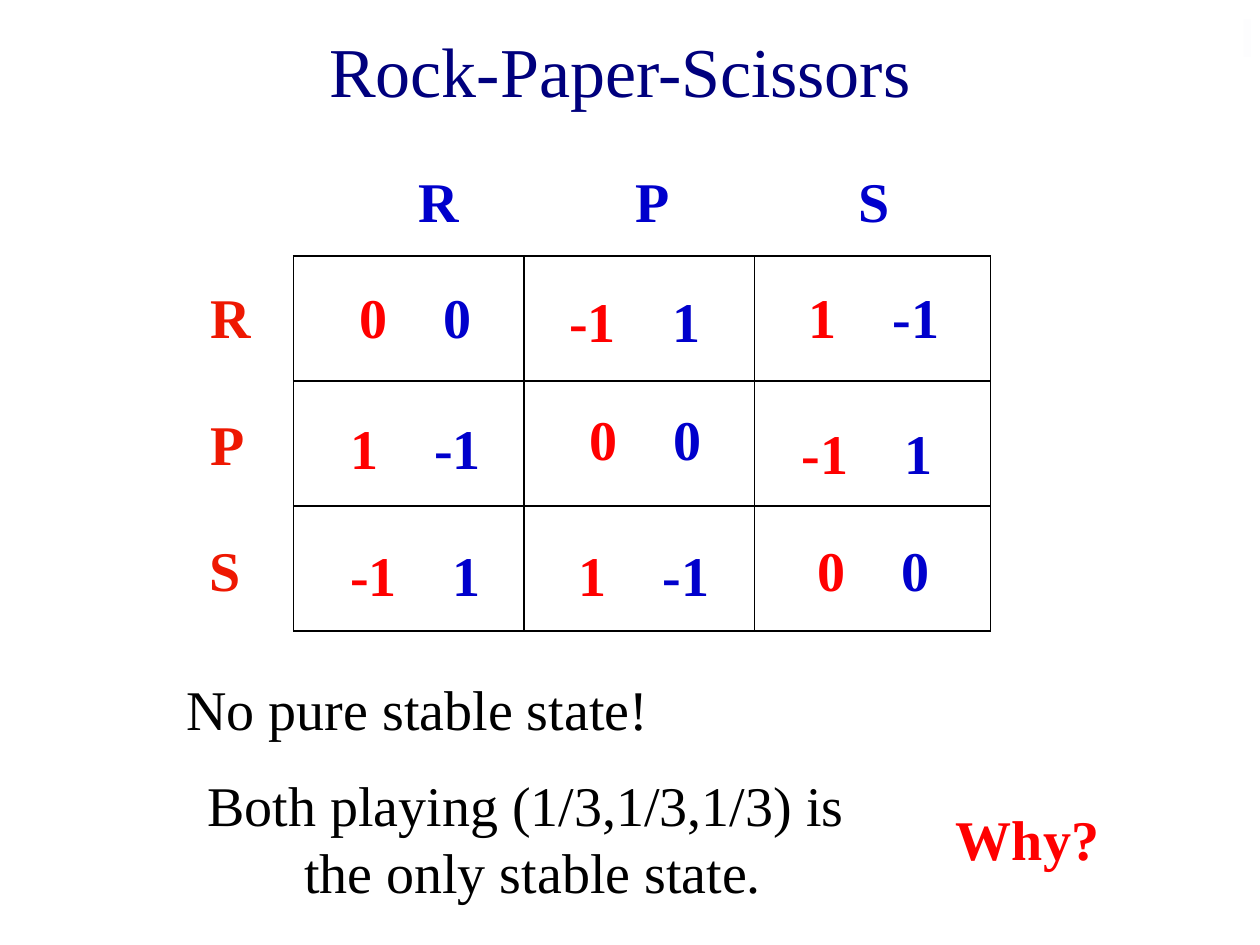
from dataclasses import dataclass
from lxml.etree import SubElement
from pptx import Presentation
from pptx.dml.color import RGBColor
from pptx.enum.shapes import MSO_SHAPE
from pptx.enum.text import MSO_ANCHOR, PP_ALIGN
from pptx.oxml.ns import qn
from pptx.util import Inches, Pt


@dataclass
class Theme:
    font: str = "Times New Roman"
    navy: str = "00007D"
    blue: str = "0000CC"
    red: str = "FF0000"
    brick: str = "EE1802"
    black: str = "000000"
    white: str = "FFFFFF"
    pale: str = "CCCCE6"
    head: int = 40
    body: int = 32


look = Theme()
deck = Presentation()
deck.slide_width, deck.slide_height = Inches(10), Inches(7.5)
unit = deck.slide_width / 100
slide = deck.slides.add_slide(deck.slide_layouts[6])


def span(*sizes):
    return [round(size * unit) for size in sizes]


def write(text, box, color=look.black, size=look.body, bold=False, tail="", tint=look.blue):
    frame = slide.shapes.add_textbox(*span(*box)).text_frame
    frame.word_wrap = bool(tail)
    frame.vertical_anchor = MSO_ANCHOR.MIDDLE
    if tail:
        frame.margin_right = 0
    for spot, line in enumerate(text.split("\n")):
        para = frame.add_paragraph() if spot else frame.paragraphs[0]
        para.alignment = PP_ALIGN.LEFT if tail else PP_ALIGN.CENTER
        parts = [(line, color)]
        if tail:
            stop = 6.66 if len(line) == 1 else 8.15
            tabs = SubElement(para._p.get_or_add_pPr(), qn("a:tabLst"))
            SubElement(tabs, qn("a:tab"), pos=str(round(stop * unit)), algn="l")
            parts.append(("\t" + tail, tint))
        for words, shade in parts:
            run = para.add_run()
            run.text = words
            run.font.name = look.font
            run.font.size = Pt(size)
            run.font.bold = bold
            run.font.color.rgb = RGBColor.from_string(shade)


bars = [
    ((0, 0, 3.1, 5.8), (look.pale, look.white)),
    ((4.5, 1.5, 95.5, 3), (look.navy, look.white)),
    ((6, 0, 1.5, 1.5), (look.pale,)),
    ((0, 0, 98.7, 8.1), (look.white,)),
]
for box, tones in bars:
    bar = slide.shapes.add_shape(MSO_SHAPE.RECTANGLE, *span(*box))
    bar.shadow.inherit = False
    bar.line.fill.background()
    if len(tones) == 1:
        bar.fill.solid()
        bar.fill.fore_color.rgb = RGBColor.from_string(tones[0])
    else:
        bar.fill.gradient()
        bar.fill.gradient_angle = 0
        for stop, tone in zip(bar.fill.gradient_stops, tones):
            stop.color.rgb = RGBColor.from_string(tone)

write("Rock-Paper-Scissors", (4.2, -2, 90, 15), look.navy, look.head)

grid = slide.shapes.add_table(3, 3, *span(23.3, 20.3, 55.3, 29.8)).table
grid.first_row = grid.horz_banding = False
for col, wide in zip(grid.columns, span(18.3, 18.3, 18.7)):
    col.width = wide
for row in grid.rows:
    row.height = span(9.93)[0]
    for cell in row.cells:
        props = cell._tc.get_or_add_tcPr()
        for side in ("lnL", "lnR", "lnT", "lnB"):
            edge = SubElement(props, qn("a:" + side), w=str(Pt(1)))
            fill = SubElement(edge, qn("a:solidFill"))
            SubElement(fill, qn("a:srgbClr"), val=look.black)
        cell.fill.background()

tall = 6.4
moves = zip("RPS", (5.3, 4.8, 4.5), (32.2, 49.4, 67.1), (15.7, 15.7, 15.6), (21.9, 32, 42))
for move, wide, across, left, down in moves:
    write(move, (across, 12.7, wide, tall), look.blue, bold=True)
    write(move, (left, down, wide, tall), look.brick, bold=True)

pays = {"tie": ("0", "0", 11), "win": ("1", "-1", 12.5), "loss": ("-1", "1", 12.5)}
games = [
    ("tie", 27.55, 21.9), ("loss", 44.2, 22.2), ("win", 63.2, 21.9),
    ("win", 26.8, 32.3), ("tie", 45.8, 31.6), ("loss", 62.65, 32.7),
    ("loss", 26.8, 42.4), ("win", 44.95, 42.4), ("tie", 63.9, 42),
]
for game, left, top in games:
    mine, yours, wide = pays[game]
    write(mine, (left, top, wide, tall), look.red, bold=True, tail=yours)

write("No pure stable state!", (13.6, 53, 39.1, tall))
write("Both playing (1/3,1/3,1/3) is \nthe only stable state.", (15.25, 60.6, 54.1, 11.8))
write("Why?", (74.8, 63.3, 13.5, tall), look.red, bold=True)

deck.save("out.pptx")
